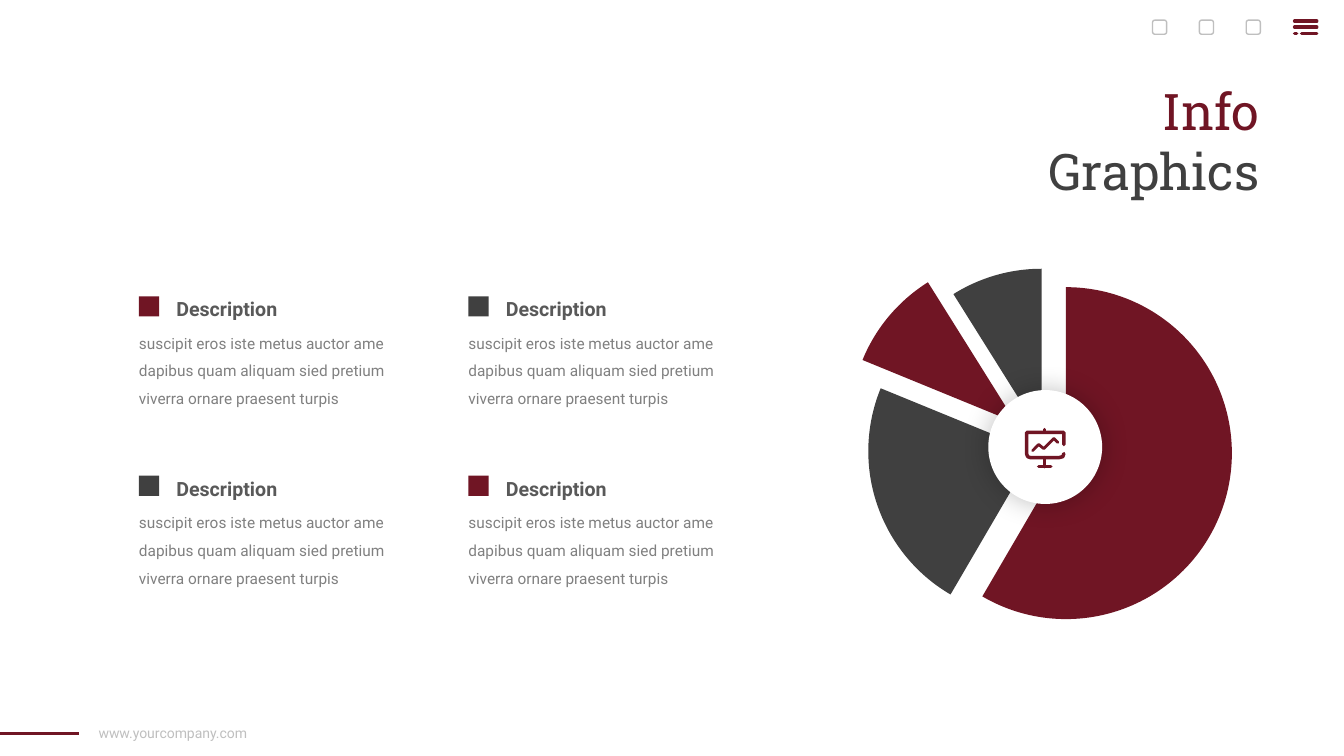
"""Build the Info Graphics slide: an exploded pie with four descriptions."""
from dataclasses import dataclass

import pptx
import pptx.chart.data
import pptx.dml.color
import pptx.enum.chart
import pptx.enum.shapes
import pptx.enum.text
import pptx.oxml
import pptx.oxml.ns
import pptx.util
from pptx.util import Inches

WINE, CHARCOAL, WHITE, SILVER = "701524", "404040", "FFFFFF", "BFBFBF"
SHAPE = pptx.enum.shapes.MSO_SHAPE
ALIGN = pptx.enum.text.PP_ALIGN
DESCRIPTION = ("suscipit eros iste metus auctor ame dapibus quam aliquam "
               "sied pretium viverra ornare praesent turpis")


@dataclass
class Slice:
    category: str
    value: int
    color: str
    explosion: int


@dataclass
class Stroke:
    points: list[tuple[float, float]]
    width: float = 2.5
    cap: str = "rnd"


SLICES = [
    Slice("1", 59, WINE, 13),
    Slice("2", 23, CHARCOAL, 7),
    Slice("3", 10, WINE, 23),
    Slice("4", 9, CHARCOAL, 8),
]
BOARD_ICON = [
    Stroke([(10.56, 4.41), (10.56, 4.29), (10.19, 4.29), (10.19, 4.5),
            (10.2, 4.53), (10.23, 4.54), (10.51, 4.54), (10.55, 4.53), (10.56, 4.5)]),
    Stroke([(10.25, 4.47), (10.31, 4.41), (10.36, 4.45), (10.46, 4.35), (10.5, 4.39)], 2),
    Stroke([(10.37, 4.26), (10.37, 4.29)], 2),
    Stroke([(10.37, 4.54), (10.37, 4.63)]),
    Stroke([(10.31, 4.63), (10.43, 4.63)]),
]
MENU_ICON = [
    Stroke([(12.85, 0.21), (13.07, 0.21)]),
    Stroke([(12.85, 0.27), (13.07, 0.27)]),
    Stroke([(12.85, 0.33), (12.87, 0.33)]),
    Stroke([(12.92, 0.33), (13.07, 0.33)]),
]
FOOTER_RULE = Stroke([(0, 7.28), (0.78, 7.28)], 2, "flat")


def rgb(color: str) -> pptx.dml.color.RGBColor:
    return pptx.dml.color.RGBColor.from_string(color)


def xml(markup: str):
    return pptx.oxml.parse_xml(markup.replace(
        "/>", f" {pptx.oxml.ns.nsdecls('a', 'c')}/>", 1) if markup.count("<") == 1 else
        markup.replace(">", f" {pptx.oxml.ns.nsdecls('a', 'c')}>", 1))


def add_text(slide, lines: list[tuple[str, str]], left: float, top: float,
             width: float, height: float, *, size: float, font: str = "Roboto",
             bold: bool = False, wrap: bool = False, align=ALIGN.LEFT,
             spacing: float = 1.0) -> None:
    frame = slide.shapes.add_textbox(
        Inches(left), Inches(top), Inches(width), Inches(height)).text_frame
    frame.margin_left = frame.margin_right = frame.margin_top = frame.margin_bottom = 0
    frame.word_wrap = wrap
    frame.auto_size = pptx.enum.text.MSO_AUTO_SIZE.SHAPE_TO_FIT_TEXT
    for index, (text, color) in enumerate(lines):
        paragraph = frame.add_paragraph() if index else frame.paragraphs[0]
        paragraph.alignment = align
        paragraph.line_spacing = spacing
        run = paragraph.add_run()
        run.text = text
        run.font.name = font
        run.font.size = pptx.util.Pt(size)
        run.font.bold = bold
        run.font.color.rgb = rgb(color)


def add_solid(slide, kind, left: float, top: float, side: float, color: str):
    solid = slide.shapes.add_shape(
        kind, Inches(left), Inches(top), Inches(side), Inches(side))
    solid.shadow.inherit = False
    solid.fill.solid()
    solid.fill.fore_color.rgb = rgb(color)
    solid.line.fill.background()
    return solid


def add_stroke(slide, stroke: Stroke) -> None:
    points = [(Inches(x), Inches(y)) for x, y in stroke.points]
    if len(points) == 2:
        line = slide.shapes.add_connector(
            pptx.enum.shapes.MSO_CONNECTOR.STRAIGHT, *points[0], *points[1])
    else:
        builder = slide.shapes.build_freeform(*points[0])
        builder.add_line_segments(points[1:], close=False)
        line = builder.convert_to_shape()
        line.fill.background()
    line.line.color.rgb = rgb(WINE)
    line.line.width = pptx.util.Pt(stroke.width)
    properties = line.element.spPr
    outline = properties.find(pptx.oxml.ns.qn("a:ln"))
    outline.set("cap", stroke.cap)
    outline.append(xml("<a:round/>"))
    properties.append(xml("<a:effectLst/>"))


def add_pie(slide) -> None:
    data = pptx.chart.data.CategoryChartData()
    data.categories = [part.category for part in SLICES]
    data.add_series("Series 1", [part.value for part in SLICES])
    pie = slide.shapes.add_chart(
        pptx.enum.chart.XL_CHART_TYPE.PIE, Inches(8.5), Inches(2.65),
        Inches(3.75), Inches(3.58), data).chart
    pie.has_legend = pie.has_title = False
    pie.font.name = "Roboto"
    pie.font.size = pptx.util.Pt(10)
    pie.font.color.rgb = rgb("000000")
    plot = pie.plots[0]
    plot.vary_by_categories = True
    for index, part in enumerate(SLICES):
        wedge = plot.series[0].points[index].format
        wedge.fill.solid()
        wedge.fill.fore_color.rgb = rgb(part.color)
        wedge.line.fill.background()
    for part, point in zip(SLICES, pie.element.iter(pptx.oxml.ns.qn("c:dPt"))):
        point.find(pptx.oxml.ns.qn("c:spPr")).addprevious(
            xml(f'<c:explosion val="{part.explosion}"/>'))
    area = next(pie.element.iter(pptx.oxml.ns.qn("c:plotArea")))
    for layout in area.findall(pptx.oxml.ns.qn("c:layout")):
        area.remove(layout)
    area.insert(0, xml(
        '<c:layout><c:manualLayout><c:layoutTarget val="inner"/>'
        '<c:xMode val="edge"/><c:yMode val="edge"/><c:x val="0.06"/>'
        '<c:y val="0.04"/><c:w val="0.88"/><c:h val="0.92"/>'
        '</c:manualLayout></c:layout>'))


def add_hub(slide) -> None:
    hub = add_solid(slide, SHAPE.OVAL, 9.81, 3.87, 1.13, WHITE)
    hub.element.spPr.find(pptx.oxml.ns.qn("a:effectLst")).append(xml(
        f'<a:outerShdw blurRad="{pptx.util.Pt(20)}" dist="0" dir="0">'
        '<a:srgbClr val="000000"><a:alpha val="25000"/></a:srgbClr></a:outerShdw>'))
    for stroke in BOARD_ICON:
        add_stroke(slide, stroke)


def add_descriptions(slide) -> None:
    for column in range(2):
        for row in range(2):
            left, top = 1.38 + 3.27 * column, 2.94 + 1.78 * row
            add_text(slide, [(DESCRIPTION, "808080")], left, top + 0.28, 2.66, 0.8,
                     size=11, wrap=True, spacing=1.5)
            add_text(slide, [("Description", "595959")], left + 0.37, top - 0.11,
                     1.01, 0.31, size=14, bold=True, spacing=1.5)
            add_solid(slide, SHAPE.RECTANGLE, left, top, 0.2,
                      (WINE, CHARCOAL)[(row + column) % 2])


def main() -> None:
    deck = pptx.Presentation()
    deck.slide_width, deck.slide_height = Inches(13.34), Inches(7.5)
    slide = deck.slides.add_slide(deck.slide_layouts[6])
    add_pie(slide)
    add_descriptions(slide)
    add_hub(slide)
    add_text(slide, [("Info", WINE), ("Graphics", CHARCOAL)], 10.32, 0.79, 2.18, 1.21,
             size=36, font="Roboto Slab", align=ALIGN.RIGHT)
    add_text(slide, [("www.yourcompany.com", SILVER)], 0.94, 7.19, 1.55, 0.17,
             size=10, align=ALIGN.CENTER)
    for stroke in [FOOTER_RULE, *MENU_ICON]:
        add_stroke(slide, stroke)
    for index in range(3):
        social = add_solid(slide, SHAPE.ROUNDED_RECTANGLE, 11.44 + 0.465 * index,
                           0.2, 0.14, WHITE)
        social.line.color.rgb = rgb(SILVER)
        social.line.width = pptx.util.Pt(1)
    deck.save("out.pptx")


if __name__ == "__main__":
    main()
